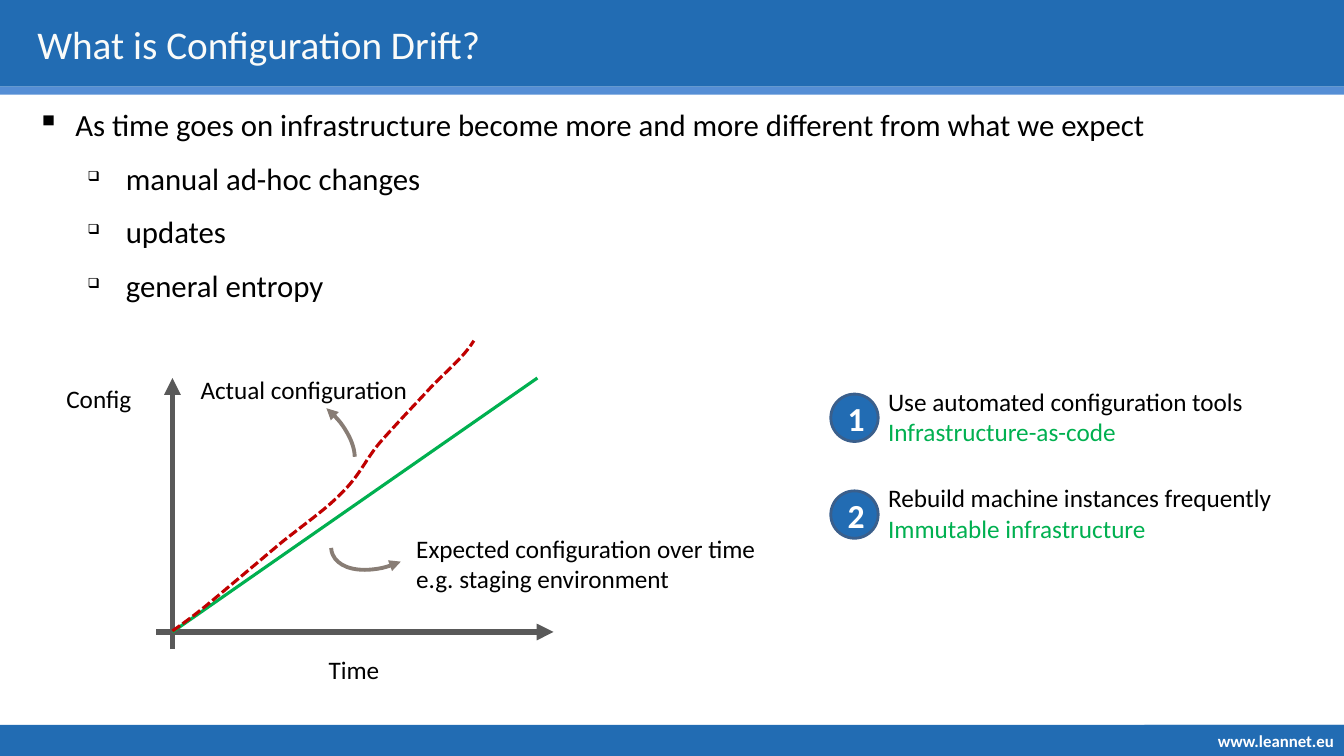
from dataclasses import dataclass
from typing import Optional

from lxml.etree import SubElement
from pptx import Presentation
from pptx.dml.color import RGBColor
from pptx.enum.dml import MSO_LINE
from pptx.enum.shapes import MSO_CONNECTOR, MSO_SHAPE
from pptx.enum.text import MSO_ANCHOR, MSO_AUTO_SIZE, PP_ALIGN
from pptx.oxml.ns import qn
from pptx.util import Inches, Pt

FONT = "Calibri"
BLUE, WHITE, BLACK = "226CB3", "FFFFFF", "000000"
GREEN, RED, AXIS, TAUPE = "00B050", "C00000", "595959", "887D75"


@dataclass
class Bar:
    left: float
    top: float
    width: float
    height: float
    color: str = BLUE


@dataclass
class Label:
    text: str
    left: float
    top: float
    width: float
    height: float = 0.4
    second_color: str = BLACK


@dataclass
class Stroke:
    start: tuple[float, float]
    end: tuple[float, float]
    color: str
    width: float
    arrow: bool = False


@dataclass
class Pointer:
    left: float
    top: float
    rotation: float
    sweep_end: float


@dataclass
class Practice:
    action: str
    name: str
    width: float


BARS = [
    Bar(0, 0, 13.33, 0.86),
    Bar(0, 7.19, 13.33, 0.31),
    Bar(0, 0.86, 13.33, 0.08, "558ED5"),
]
BULLETS = [
    (0, "As time goes on infrastructure become more and more different from what we expect"),
    (1, "manual ad-hoc changes"),
    (1, "updates"),
    (1, "general entropy"),
]
BULLET_STYLES = [("▪", 0.65, 100), ("❑", 1.15, 45)]
STROKES = [
    Stroke((1.55, 6.27), (5.49, 6.27), AXIS, 4, True),
    Stroke((1.71, 6.44), (1.71, 3.75), AXIS, 4, True),
    Stroke((1.71, 6.27), (5.33, 3.75), GREEN, 2.25),
]
LABELS = [
    Label("Time", 3.16, 6.44, 0.71),
    Label("Config", 0.56, 3.75, 0.86),
    Label("Expected configuration over time\ve.g. staging environment", 4.03, 5.24, 3.61, 0.71),
    Label("Actual configuration", 1.89, 3.66, 2.28),
]
POINTERS = [Pointer(3.25, 4.93, 156.2, 4.037), Pointer(2.43, 3.97, 40.5, 206.407)]
DRIFT_START = (1.71, 6.26)
DRIFT_CURVES = [
    ((1.81, 6.19), (1.91, 6.12), (2.08, 5.98)),
    ((2.26, 5.83), (2.77, 5.4), (2.77, 5.4)),
    ((2.99, 5.22), (3.24, 5.05), (3.4, 4.88)),
    ((3.57, 4.71), (3.62, 4.57), (3.76, 4.4)),
    ((3.9, 4.24), (4.07, 4.06), (4.23, 3.89)),
    ((4.38, 3.72), (4.59, 3.56), (4.7, 3.38)),
]
PRACTICES = [
    Practice("Use automated configuration tools", "Infrastructure-as-code", 3.76),
    Practice("Rebuild machine instances frequently", "Immutable infrastructure", 4.05),
]


def rgb(color: str) -> RGBColor:
    return RGBColor.from_string(color)


def box(left: float, top: float, width: float, height: float) -> tuple:
    return Inches(left), Inches(top), Inches(width), Inches(height)


def style_runs(p, size: float, color: str, bold: bool = False) -> None:
    for r in p.runs:
        r.font.name, r.font.size, r.font.bold = FONT, Pt(size), bold
        r.font.color.rgb = rgb(color)


def style_line(line, color: str, width: float, arrow: Optional[str] = None) -> None:
    line.color.rgb = rgb(color)
    line.width = Pt(width)
    if arrow:
        SubElement(line._get_or_add_ln(), qn(f"a:{arrow}"), type="triangle")


def add_bar(s, bar: Bar):
    sp = s.shapes.add_shape(MSO_SHAPE.RECTANGLE, *box(bar.left, bar.top, bar.width, bar.height))
    sp.shadow.inherit = False
    sp.fill.solid()
    sp.fill.fore_color.rgb = rgb(bar.color)
    sp.line.fill.background()
    return sp


def add_address(s) -> None:
    tf = add_bar(s, Bar(11.35, 7.19, 1.98, 0.31)).text_frame
    tf.text = "www.leannet.eu"
    tf.vertical_anchor = MSO_ANCHOR.MIDDLE
    tf.paragraphs[0].alignment = PP_ALIGN.RIGHT
    style_runs(tf.paragraphs[0], 12, WHITE, True)


def add_title(s) -> None:
    sp = s.shapes.title
    sp.element.getparent().append(sp.element)
    sp.left, sp.top, sp.width, sp.height = box(0.27, 0, 9.77, 0.86)
    tf = sp.text_frame
    tf.text = "What is Configuration Drift?"
    tf.vertical_anchor = MSO_ANCHOR.MIDDLE
    tf.paragraphs[0].alignment = PP_ALIGN.LEFT
    style_runs(tf.paragraphs[0], 28, "FAFBF9")


def add_bullets(s) -> None:
    tf = s.shapes.add_textbox(*box(0, 1, 13.33, 2.63)).text_frame
    tf.word_wrap = True
    for i, (level, text) in enumerate(BULLETS):
        p = tf.add_paragraph() if i else tf.paragraphs[0]
        p.text = text
        p.level = level
        if i:
            p.space_before = Pt(12)
        char, margin, percent = BULLET_STYLES[level]
        pPr = p._p.get_or_add_pPr()
        pPr.set("marL", str(Inches(margin)))
        pPr.set("indent", str(Inches(-0.38)))
        SubElement(pPr, qn("a:buSzPct"), val=str(percent * 1000))
        SubElement(pPr, qn("a:buChar"), char=char)
        style_runs(p, 22, BLACK)


def add_label(s, label: Label) -> None:
    tf = s.shapes.add_textbox(*box(label.left, label.top, label.width, label.height)).text_frame
    tf.text = label.text
    tf.word_wrap = False
    tf.auto_size = MSO_AUTO_SIZE.SHAPE_TO_FIT_TEXT
    for p, color in zip(tf.paragraphs, (BLACK, label.second_color)):
        style_runs(p, 18, color)


def add_stroke(s, stroke: Stroke) -> None:
    ends = [Inches(v) for v in stroke.start + stroke.end]
    cxn = s.shapes.add_connector(MSO_CONNECTOR.STRAIGHT, *ends)
    style_line(cxn.line, stroke.color, stroke.width, "tailEnd" if stroke.arrow else None)
    SubElement(cxn._element.spPr, qn("a:effectLst"))


def add_pointer(s, pointer: Pointer) -> None:
    sp = s.shapes.add_shape(MSO_SHAPE.ARC, *box(pointer.left, pointer.top, 1.18, 0.67))
    sp.shadow.inherit = False
    sp.adjustments[0], sp.adjustments[1] = 162, pointer.sweep_end
    sp.rotation = pointer.rotation
    sp.fill.background()
    style_line(sp.line, TAUPE, 2.75, "headEnd")


def drift_points(steps: int = 12) -> list[tuple[int, int]]:
    points, start = [], DRIFT_START
    for curve in DRIFT_CURVES:
        for t in (i / steps for i in range(1, steps + 1)):
            weights = ((1 - t) ** 3, 3 * t * (1 - t) ** 2, 3 * t * t * (1 - t), t ** 3)
            x, y = (sum(w * v for w, v in zip(weights, axis)) for axis in zip(start, *curve))
            points.append((Inches(x), Inches(y)))
        start = curve[-1]
    return points


def add_drift(s) -> None:
    builder = s.shapes.build_freeform(*(Inches(v) for v in DRIFT_START))
    builder.add_line_segments(drift_points(), close=False)
    sp = builder.convert_to_shape()
    sp.shadow.inherit = False
    sp.fill.background()
    style_line(sp.line, RED, 2.25)
    sp.line.dash_style = MSO_LINE.SQUARE_DOT


def add_practice(s, number: int, practice: Practice) -> None:
    top = 3.78 + 0.96 * (number - 1)
    sp = s.shapes.add_shape(MSO_SHAPE.OVAL, *box(8.24, top + 0.13, 0.47, 0.47))
    sp.shadow.inherit = False
    sp.fill.solid()
    sp.fill.fore_color.rgb = rgb(BLUE)
    style_line(sp.line, "3A5F8C", 2)
    tf = sp.text_frame
    tf.text = str(number)
    tf.vertical_anchor = MSO_ANCHOR.MIDDLE
    tf.paragraphs[0].alignment = PP_ALIGN.CENTER
    style_runs(tf.paragraphs[0], 24, WHITE, True)
    text = f"{practice.action}\n{practice.name}"
    add_label(s, Label(text, 8.71, top, practice.width, 0.71, GREEN))


def main() -> None:
    prs = Presentation()
    prs.slide_width, prs.slide_height = Inches(13.33), Inches(7.5)
    s = prs.slides.add_slide(prs.slide_layouts[5])
    for bar in BARS:
        add_bar(s, bar)
    add_address(s)
    add_title(s)
    add_bullets(s)
    for stroke in STROKES:
        add_stroke(s, stroke)
    add_drift(s)
    for pointer in POINTERS:
        add_pointer(s, pointer)
    for label in LABELS:
        add_label(s, label)
    for number, practice in enumerate(PRACTICES, 1):
        add_practice(s, number, practice)
    prs.save("out.pptx")


if __name__ == "__main__":
    main()
